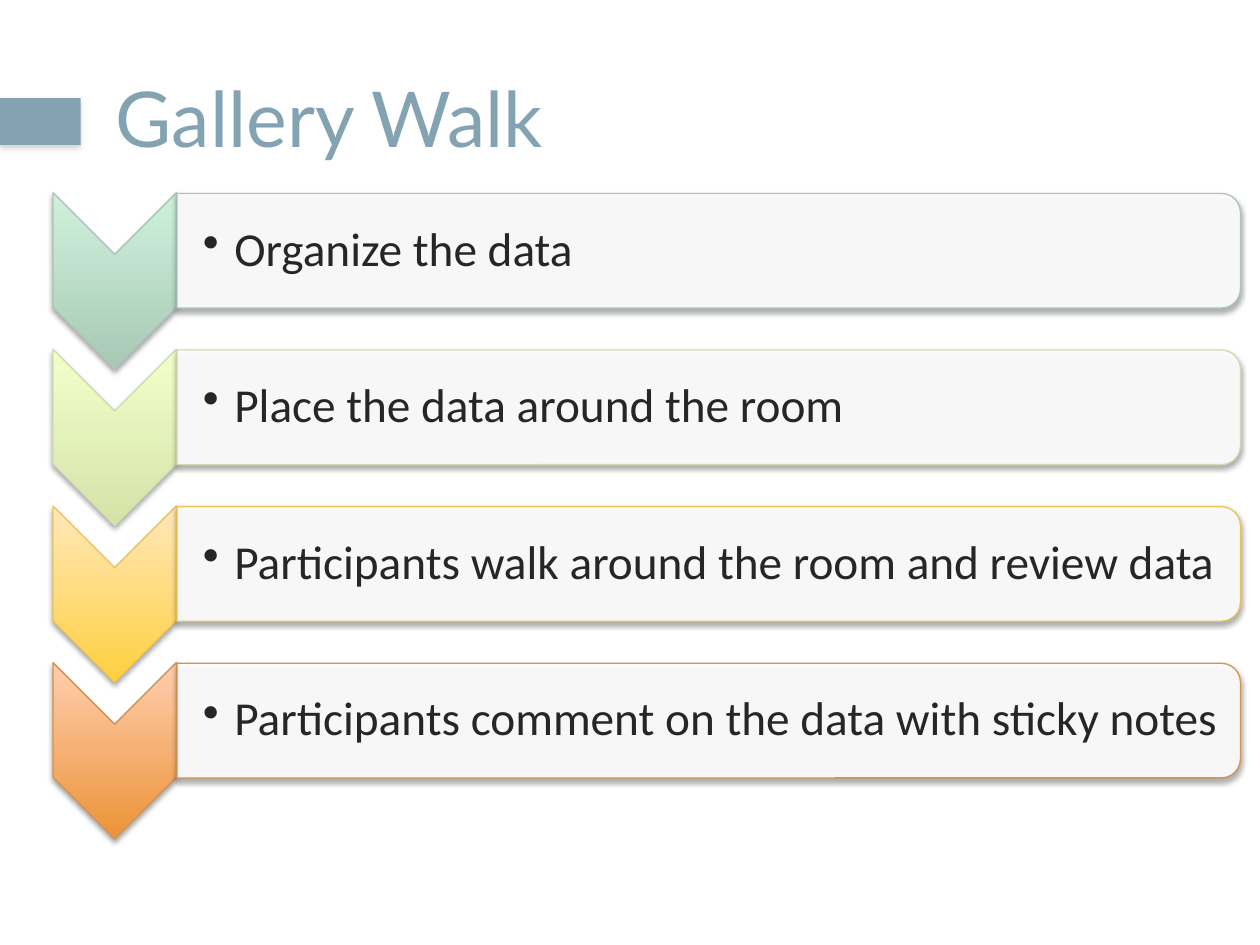
from dataclasses import dataclass

from lxml import etree
from pptx import Presentation
from pptx.dml.color import RGBColor
from pptx.enum.shapes import MSO_SHAPE
from pptx.enum.text import MSO_ANCHOR, PP_ALIGN
from pptx.oxml.ns import qn
from pptx.slide import Slide
from pptx.util import Inches, Pt

RECTANGLE = MSO_SHAPE.RECTANGLE
CHEVRON = MSO_SHAPE.CHEVRON
ROUNDED_END = MSO_SHAPE.ROUND_2_SAME_RECTANGLE
MIDDLE = MSO_ANCHOR.MIDDLE
LEFT = PP_ALIGN.LEFT

SLATE = RGBColor(0x83, 0xA3, 0xB2)
INK = RGBColor(0x26, 0x26, 0x26)
WHITE = RGBColor(0xFF, 0xFF, 0xFF)
GRAY = RGBColor(0x80, 0x80, 0x80)
BLACK = RGBColor(0, 0, 0)

STEPS = [
    ("Organize the data", RGBColor(0xA7, 0xC9, 0xB5),
     RGBColor(0xCE, 0xF1, 0xDC), RGBColor(0xAB, 0xC5, 0xB6)),
    ("Place the data around the room", RGBColor(0xD5, 0xE2, 0xA8),
     RGBColor(0xF2, 0xFF, 0xCB), RGBColor(0xD1, 0xDB, 0xAF)),
    ("Participants walk around the room and review data", RGBColor(0xFF, 0xCF, 0x40),
     RGBColor(0xFF, 0xE8, 0xB9), RGBColor(0xEB, 0xC5, 0x54)),
    ("Participants comment on the data with sticky notes", RGBColor(0xEC, 0x93, 0x37),
     RGBColor(0xFF, 0xCE, 0xAF), RGBColor(0xD7, 0x93, 0x4C)),
]
FIRST_ROW, ROW_PITCH = 19.9, 12.43


@dataclass
class Deck:
    """Holds the style and the slide, laid out on a grid of 100 columns by 75 rows."""

    slide: Slide
    cell: int
    title_font: str = "Lato"
    body_font: str = "Calibri"

    def box(self, *cells):
        return [round(value * self.cell) for value in cells]

    def centered(self, kind, column, row, width, height):
        shape = self.slide.shapes.add_shape(
            kind, *self.box(column - width / 2, row - height / 2, width, height))
        shape.rotation = 90
        return shape

    def shadow(self, shape, color):
        shape.shadow.inherit = False
        effects = shape._element.spPr.find(qn("a:effectLst"))
        outer = etree.SubElement(effects, qn("a:outerShdw"), blurRad=str(Pt(3.1)),
                                 dist=str(Pt(1.8)), dir="5400000", rotWithShape="0")
        tint = etree.SubElement(outer, qn("a:srgbClr"), val=str(color))
        etree.SubElement(tint, qn("a:alpha"), val="35000")

    def outline(self, shape, color):
        shape.line.color.rgb = color
        shape.line.width = Pt(0.75)
        self.shadow(shape, BLACK)

    def title(self, text):
        heading = self.slide.shapes.title
        heading.left, heading.top, heading.width, heading.height = self.box(8.2, 3, 86.8, 12.5)
        heading.text_frame.text = text
        heading.text_frame.vertical_anchor = MIDDLE
        paragraph = heading.text_frame.paragraphs[0]
        paragraph.alignment = LEFT
        self.font(paragraph, self.title_font, 44, SLATE)

    def font(self, paragraph, name, size, color):
        paragraph.font.name = name
        paragraph.font.size = Pt(size)
        paragraph.font.color.rgb = color

    def accent(self):
        block = self.slide.shapes.add_shape(RECTANGLE, *self.box(0, 7.8, 6.4, 3.7))
        block.fill.solid()
        block.fill.fore_color.rgb = SLATE
        block.line.fill.background()
        self.shadow(block, GRAY)

    def chevron(self, row, dark, light, edge):
        marker = self.centered(CHEVRON, 9.1, row + 2.4, 14, 9.8)
        marker.fill.gradient()
        marker.fill.gradient_angle = 90
        for stop, color in zip(marker.fill.gradient_stops, (dark, light)):
            stop.color.rgb = color
        marker._element.spPr.find(qn("a:gradFill")).set("rotWithShape", "0")
        self.outline(marker, edge)

    def bar(self, row, edge):
        panel = self.centered(ROUNDED_END, 56.25, row, 9.1, 84.4)
        panel.fill.solid()
        panel.fill.fore_color.rgb = WHITE
        tint = panel._element.spPr.find(qn("a:solidFill"))[0]
        etree.SubElement(tint, qn("a:alpha"), val="90000")
        self.outline(panel, edge)

    def bullet(self, row, text):
        label = self.slide.shapes.add_textbox(*self.box(14, row - 4.1, 83.9, 8.2))
        frame = label.text_frame
        frame.word_wrap = True
        frame.vertical_anchor = MIDDLE
        frame.margin_left = Inches(0.21)
        frame.margin_top = frame.margin_right = frame.margin_bottom = Inches(0.02)
        paragraph = frame.paragraphs[0]
        paragraph.text = text
        paragraph.level = 1
        paragraph.line_spacing = 0.9
        properties = paragraph._p.get_or_add_pPr()
        properties.set("marL", str(Inches(0.25)))
        properties.set("indent", str(-Inches(0.25)))
        etree.SubElement(properties, qn("a:buChar"), char="•")
        self.font(paragraph, self.body_font, 27, INK)

    def step(self, row, text, dark, light, edge):
        self.chevron(row, dark, light, edge)
        self.bar(row, edge)
        self.bullet(row, text)


def main():
    presentation = Presentation()
    presentation.slide_width, presentation.slide_height = Inches(10), Inches(7.5)
    slide = presentation.slides.add_slide(presentation.slide_layouts[5])
    deck = Deck(slide, presentation.slide_width // 100)
    deck.accent()
    deck.title("Gallery Walk")
    for index, step in enumerate(STEPS):
        deck.step(FIRST_ROW + index * ROW_PITCH, *step)
    presentation.save("out.pptx")


if __name__ == "__main__":
    main()
